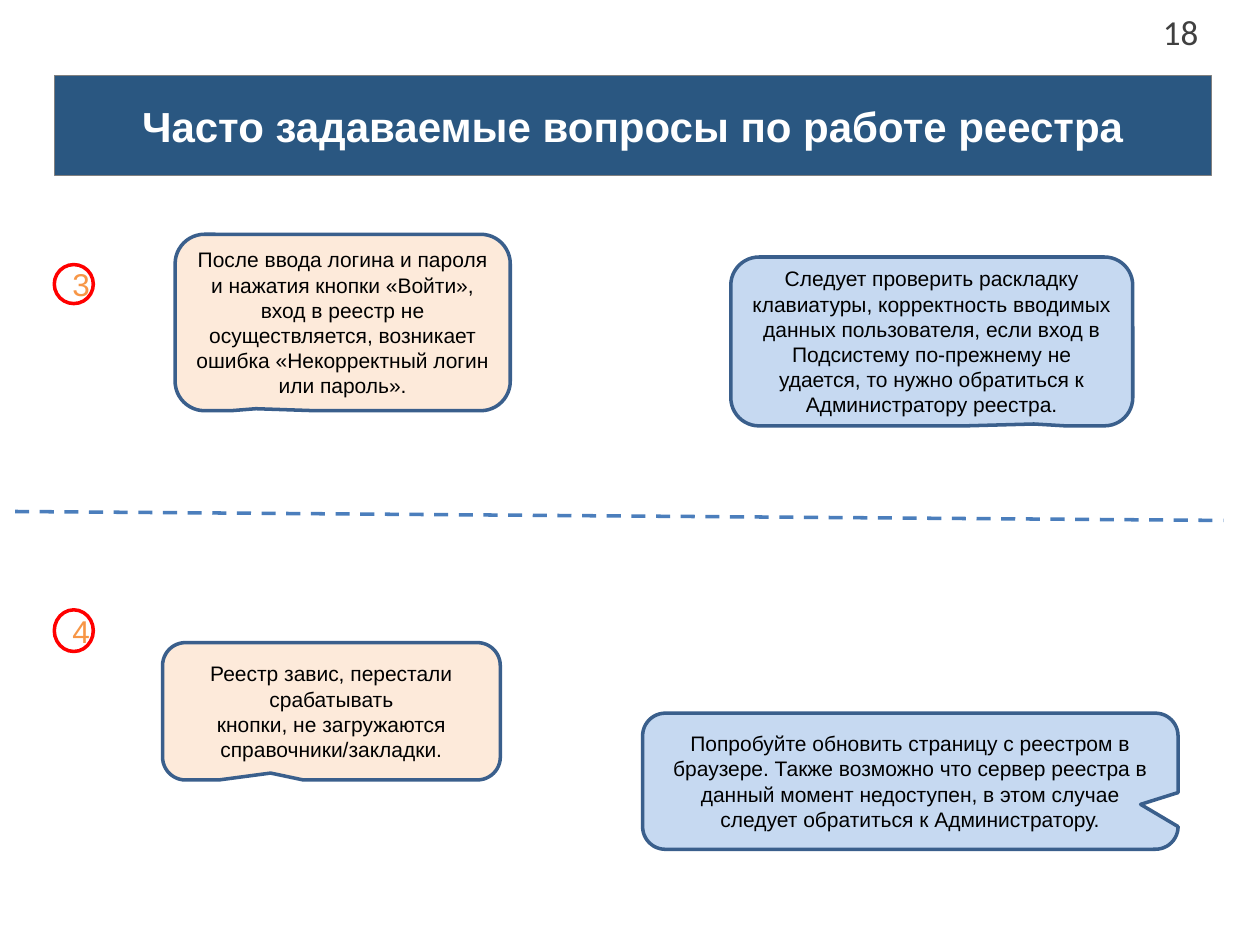
from lxml import etree
from pptx import Presentation
from pptx import util as u
from pptx.dml.color import RGBColor
from pptx.enum import dml, shapes, text
from pptx.oxml import parse_xml
from pptx.oxml.ns import nsdecls, qn

WHITE = RGBColor(0xFF, 0xFF, 0xFF)
BLACK = RGBColor(0, 0, 0)
NAVY = RGBColor(0x2A, 0x57, 0x81)
GREY = RGBColor(0x80, 0x80, 0x80)
DARK = RGBColor(0x40, 0x40, 0x40)
PEACH = RGBColor(0xFD, 0xEA, 0xDA)
SKY = RGBColor(0xC6, 0xD9, 0xF1)
OUTLINE = RGBColor(0x3A, 0x5F, 0x8C)
DASH = RGBColor(0x4B, 0x7E, 0xBC)
RED = RGBColor(0xFF, 0, 0)
ORANGE = RGBColor(0xF7, 0x96, 0x46)

# Each item: box, tail adjustments, fill, paragraphs
CALLOUTS = [
    ((100.1, 133.9, 191.5, 100.8), (-0.259, 0.489), PEACH,
     ["После ввода логина и пароля и нажатия кнопки «Войти», вход в реестр не "
      "осуществляется, возникает ошибка «Некорректный логин или пароль»."]),
    ((417.6, 146.9, 229.7, 96.5), (0.254, 0.489), SKY,
     ["Следует проверить раскладку клавиатуры, корректность вводимых данных "
      "пользователя, если вход в Подсистему по-прежнему не удается, то нужно "
      "обратиться к Администратору реестра."]),
    ((92.9, 367.2, 193, 78.5), (-0.18, 0.45), PEACH,
     ["Реестр завис, перестали срабатывать",
      "кнопки, не загружаются справочники/закладки."]),
    ((367.2, 407.5, 306, 77.8), (0.43, 0.17), SKY,
     ["Попробуйте обновить страницу с реестром в браузере. Также возможно что "
      "сервер реестра в данный момент недоступен, в этом случае следует "
      "обратиться к Администратору."]),
]
NUMBERS = [("3", (31, 151.2, 22.3, 22.3)), ("4", (31, 348.5, 22.3, 23.8))]


def pts(values):
    return [u.Pt(v) for v in values]


def write(sp, paragraphs, color, align=text.PP_ALIGN.CENTER,
          anchor=text.MSO_ANCHOR.MIDDLE, **font):
    tf = sp.text_frame
    tf.word_wrap = True
    tf.auto_size = text.MSO_AUTO_SIZE.NONE
    tf.vertical_anchor = anchor
    tf.text = "\n".join(paragraphs)
    for p in tf.paragraphs:
        p.alignment = align
        for r in p.runs:
            for name, value in font.items():
                setattr(r.font, name, value)
            r.font.color.rgb = color


def paint(sp, fill, line, width):
    if fill is None:
        sp.fill.background()
    else:
        sp.fill.solid()
        sp.fill.fore_color.rgb = fill
    sp.line.color.rgb = line
    sp.line.width = u.Pt(width)
    sp.shadow.inherit = False


def add_title(s, box, words):
    sp = s.shapes.title
    sp.left, sp.top, sp.width, sp.height = pts(box)
    # Slightly rounded corners
    sp._element.spPr.find(qn("a:xfrm")).addnext(parse_xml(
        f'<a:prstGeom {nsdecls("a")} prst="roundRect"><a:avLst>'
        '<a:gd name="adj" fmla="val 2900"/></a:avLst></a:prstGeom>'))
    paint(sp, NAVY, GREY, 0.25)
    write(sp, [words], WHITE, name="Arial", size=u.Pt(24), bold=True)


def add_page_number(s, box, words):
    sp = s.shapes.add_textbox(*pts(box))
    write(sp, [words], DARK, text.PP_ALIGN.RIGHT, text.MSO_ANCHOR.TOP,
          name="Calibri", size=u.Pt(20))


def add_callout(s, box, tail, fill, paragraphs):
    sp = s.shapes.add_shape(shapes.MSO_SHAPE.ROUNDED_RECTANGULAR_CALLOUT, *pts(box))
    for i, value in enumerate((*tail, 0.167)):
        sp.adjustments[i] = value
    paint(sp, fill, OUTLINE, 2)
    write(sp, paragraphs, BLACK, name="Arial", size=u.Pt(12))


def add_number(s, words, box):
    sp = s.shapes.add_shape(shapes.MSO_SHAPE.OVAL, *pts(box))
    paint(sp, None, RED, 2)
    write(sp, [words], ORANGE, name="Arial", size=u.Pt(18))


def add_divider(s, ends):
    sp = s.shapes.add_connector(shapes.MSO_CONNECTOR.STRAIGHT, *pts(ends))
    sp.line.color.rgb = DASH
    sp.line.width = u.Pt(2)
    sp.line.dash_style = dml.MSO_LINE.DASH
    etree.SubElement(sp._element.spPr, qn("a:effectLst"))


def main():
    prs = Presentation()
    prs.slide_width, prs.slide_height = pts((720, 540))
    s = prs.slides.add_slide(prs.slide_layouts[5])

    # Heading
    add_title(s, (31, 43.2, 661, 56.9), "Часто задаваемые вопросы по работе реестра")
    add_page_number(s, (647.3, 2.2, 44.6, 28.8), "18")

    # Questions and answers
    for callout in CALLOUTS:
        add_callout(s, *callout)
    for number in NUMBERS:
        add_number(s, *number)
    add_divider(s, (8.6, 292.3, 699.1, 297.4))

    prs.save("out.pptx")


if __name__ == "__main__":
    main()
